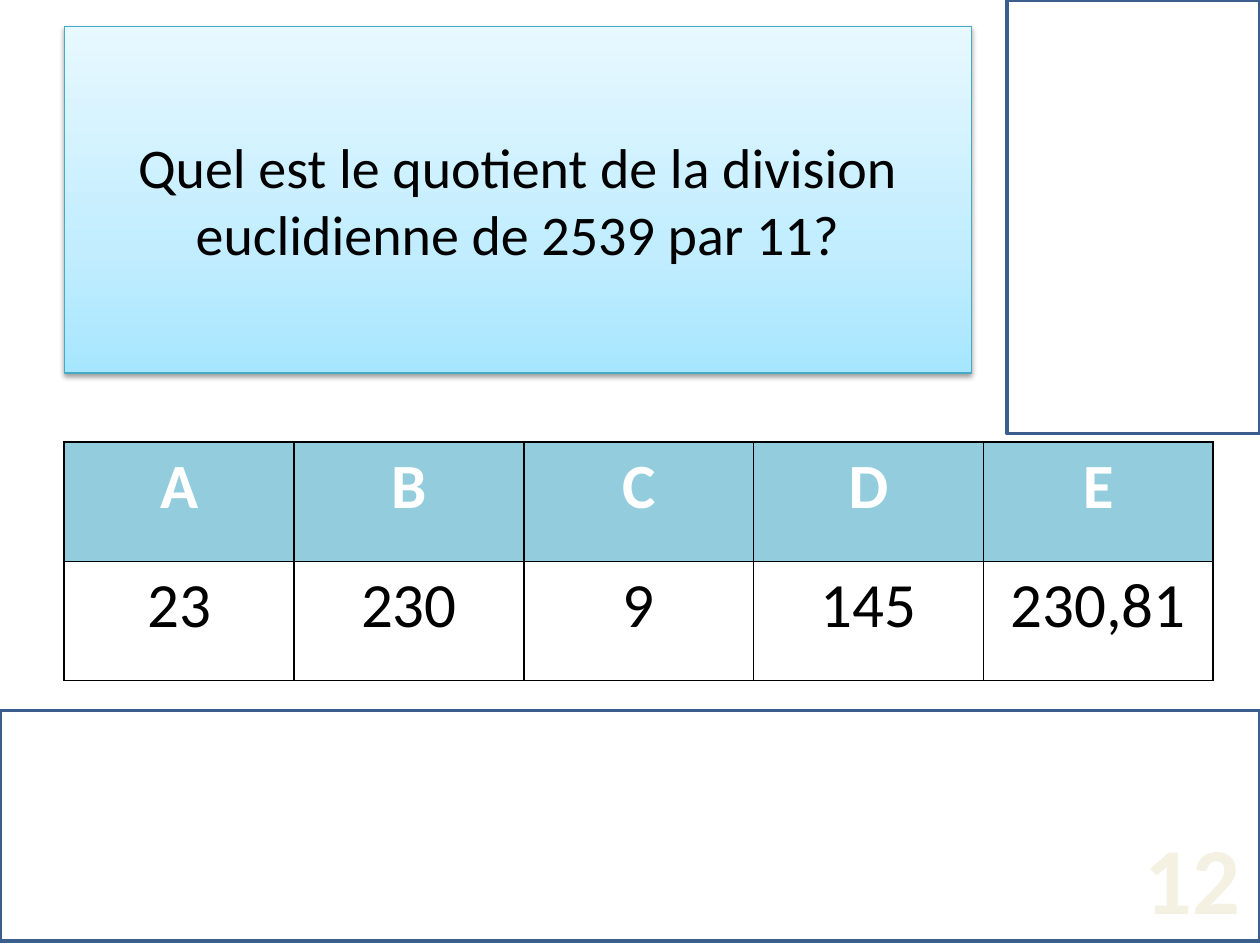
import pptx
import pptx.dml.color
import pptx.enum.shapes
import pptx.enum.text
import pptx.oxml
import pptx.oxml.ns
import pptx.util

Inches, Pt = pptx.util.Inches, pptx.util.Pt
ANCHOR = pptx.enum.text.MSO_ANCHOR
NS = pptx.oxml.ns.nsdecls("a")

QUESTION = "Quel est le quotient de la division euclidienne de 2539 par 11?"
ANSWERS = {"A": "23", "B": "230", "C": "9", "D": "145", "E": "230,81"}
NUMBER = "12"

QUESTION_BOX = (0.51, 0.21, 7.2, 2.75)
ANSWER_BOX = (0.51, 3.51, 9.12, 1.89)
NUMBER_BOX = (8.98, 6.46, 0.97, 1.01)
EMPTY_FRAMES = [(7.99, 0, 2.01, 3.44), (0, 5.64, 10, 1.83)]
GRADIENT = [(0, "A7E6FF"), (35, "C1EDFF"), (100, "E7F8FF")]


def rgb(value):
    return pptx.dml.color.RGBColor.from_string(value)


def xml(text):
    """Parse one element, adding the drawing namespace to its first tag."""
    tag, rest = text.split(" ", 1)
    return pptx.oxml.parse_xml(f"{tag} {NS} {rest}")


def write(frame, text, size, color, bold=False):
    paragraph = frame.paragraphs[0]
    paragraph.alignment = pptx.enum.text.PP_ALIGN.CENTER
    font = paragraph.font
    font.name, font.size, font.bold = "Calibri", Pt(size), bold
    font.color.rgb = rgb(color)
    run = paragraph.add_run()
    run.text = text
    return run


def add_frame(slide, box, line, width):
    frame = slide.shapes.add_shape(
        pptx.enum.shapes.MSO_SHAPE.RECTANGLE, *map(Inches, box))
    frame.shadow.inherit = False
    frame.fill.background()
    frame.line.color.rgb = rgb(line)
    frame.line.width = Pt(width)
    return frame


def add_question(slide):
    question = add_frame(slide, QUESTION_BOX, "46AAC5", 0.75)
    stops = "".join(f'<a:gs pos="{pos * 1000}"><a:srgbClr val="{color}"/></a:gs>'
                    for pos, color in GRADIENT)
    properties = question.fill._xPr
    properties.replace(
        properties.find(pptx.oxml.ns.qn("a:noFill")),
        xml(f'<a:gradFill rotWithShape="1"><a:gsLst>{stops}</a:gsLst>'
            '<a:lin ang="16200000" scaled="0"/></a:gradFill>'))
    properties.find(pptx.oxml.ns.qn("a:effectLst")).append(
        xml(f'<a:outerShdw blurRad="{Pt(3.1)}" dist="{Pt(1.6)}" dir="5400000" '
            'rotWithShape="0"><a:srgbClr val="000000"><a:alpha val="38000"/>'
            '</a:srgbClr></a:outerShdw>'))
    question.text_frame.word_wrap = True
    question.text_frame.vertical_anchor = ANCHOR.MIDDLE
    write(question.text_frame, QUESTION, 32, "000000")


def add_borders(cell):
    properties = cell._tc.get_or_add_tcPr()
    for index, side in enumerate("LRTB"):
        properties.insert(index, xml(
            f'<a:ln{side} w="{Pt(1)}"><a:solidFill><a:srgbClr val="000000"/>'
            f'</a:solidFill></a:ln{side}>'))


def add_answers(slide):
    table = slide.shapes.add_table(
        2, len(ANSWERS), *map(Inches, ANSWER_BOX)).table
    table.horz_banding = False
    for column, (letter, answer) in enumerate(ANSWERS.items()):
        header, value = table.cell(0, column), table.cell(1, column)
        header.fill.solid()
        header.fill.fore_color.rgb = rgb("93CDDD")
        value.fill.background()
        write(header.text_frame, letter, 36, "FFFFFF", True)
        write(value.text_frame, answer, 36, "000000")
        add_borders(header)
        add_borders(value)


def add_number(slide):
    frame = slide.shapes.add_textbox(*map(Inches, NUMBER_BOX)).text_frame
    frame.word_wrap = False
    frame.auto_size = pptx.enum.text.MSO_AUTO_SIZE.SHAPE_TO_FIT_TEXT
    run = write(frame, NUMBER, 54, "F4F1E3", True)
    run._r.get_or_add_rPr().insert(0, xml(
        f'<a:ln w="{Pt(1)}"><a:solidFill><a:srgbClr val="054697"/>'
        '</a:solidFill></a:ln>'))


def main():
    deck = pptx.Presentation()
    deck.slide_width, deck.slide_height = Inches(10), Inches(7.5)
    slide = deck.slides.add_slide(deck.slide_layouts[6])
    add_question(slide)
    add_answers(slide)
    add_number(slide)
    for box in EMPTY_FRAMES:
        add_frame(slide, box, "3A5F8C", 2)
    deck.save("out.pptx")


if __name__ == "__main__":
    main()
